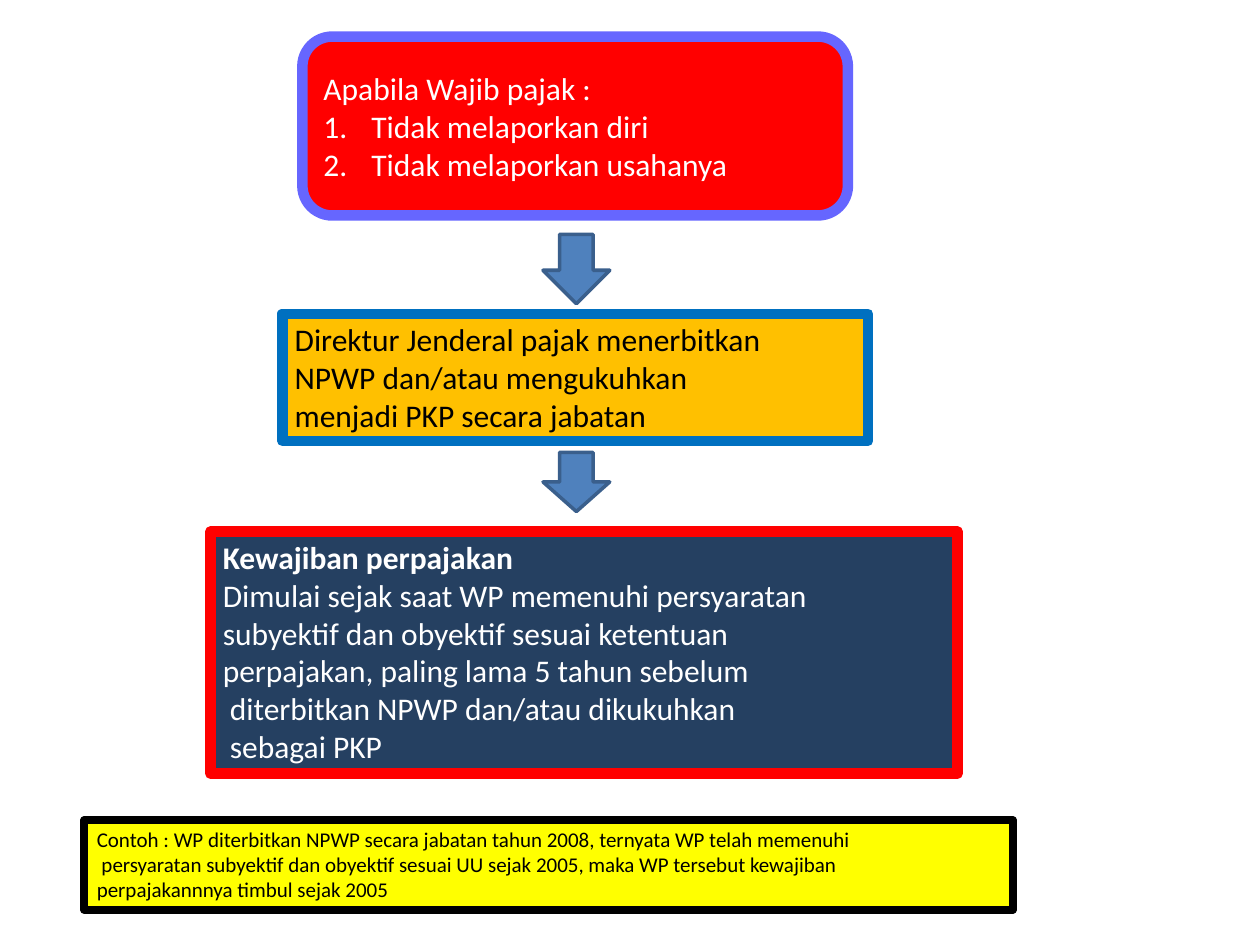
from lxml import etree
from pptx import Presentation
from pptx.dml.color import RGBColor
from pptx.enum.shapes import MSO_SHAPE
from pptx.enum.text import MSO_ANCHOR, PP_ALIGN
from pptx.oxml.ns import qn
from pptx.util import Inches, Pt

ROUNDED = MSO_SHAPE.ROUNDED_RECTANGLE
RECTANGLE = MSO_SHAPE.RECTANGLE
DOWN_ARROW = MSO_SHAPE.DOWN_ARROW
MIDDLE, TOP = MSO_ANCHOR.MIDDLE, MSO_ANCHOR.TOP
LEFT = PP_ALIGN.LEFT


def color(value):
    return RGBColor.from_string(value)


def add_block(slide, kind, place, fill, line, line_width):
    shape = slide.shapes.add_shape(kind, *[Inches(length) for length in place])
    shape.shadow.inherit = False
    shape.fill.solid()
    shape.fill.fore_color.rgb = color(fill)
    shape.line.color.rgb = color(line)
    shape.line.width = Pt(line_width)
    return shape


presentation = Presentation()
presentation.slide_width, presentation.slide_height = Inches(10), Inches(7.5)
slide = presentation.slides.add_slide(presentation.slide_layouts[6])

# Steps of the flow from top to bottom, then the example
boxes = [
    dict(kind=ROUNDED, place=(2.4, 0.29, 4.33, 1.42), fill="FF0000", line="6666FF",
         line_width=6, anchor=MIDDLE, size=18, text_color="FFFFFF",
         lines=["Apabila Wajib pajak :"],
         numbered=["Tidak melaporkan diri", "Tidak melaporkan usahanya"]),
    dict(kind=RECTANGLE, place=(2.24, 2.49, 4.65, 1.01), fill="FFC000", line="0070C0",
         line_width=6, anchor=TOP, size=18, text_color="000000",
         lines=["Direktur Jenderal pajak menerbitkan",
                "NPWP dan/atau mengukuhkan",
                "menjadi PKP secara jabatan"]),
    dict(kind=RECTANGLE, place=(1.67, 4.22, 5.93, 1.92), fill="254061", line="FF0000",
         line_width=6, anchor=TOP, size=18, text_color="FFFFFF",
         heading="Kewajiban perpajakan",
         lines=["Dimulai sejak saat WP memenuhi persyaratan",
                "subyektif dan obyektif sesuai ketentuan",
                "perpajakan, paling lama 5 tahun sebelum",
                " diterbitkan NPWP dan/atau dikukuhkan",
                " sebagai PKP"]),
    dict(kind=RECTANGLE, place=(0.67, 6.51, 7.37, 0.71), fill="FFFF00", line="000000",
         line_width=4.5, anchor=TOP, size=12, text_color="000000",
         lines=["Contoh : WP diterbitkan NPWP secara jabatan tahun 2008, "
                "ternyata WP telah memenuhi",
                " persyaratan subyektif dan obyektif sesuai UU sejak 2005, "
                "maka WP tersebut kewajiban",
                "perpajakannnya timbul sejak 2005"]),
]

for box in boxes:
    shape = add_block(slide, box["kind"], box["place"], box["fill"], box["line"],
                      box["line_width"])
    frame = shape.text_frame
    frame.word_wrap = True
    frame.vertical_anchor = box["anchor"]
    heading = [box["heading"]] if "heading" in box else []
    numbered = box.get("numbered", [])
    texts = heading + box["lines"] + numbered
    for index, text in enumerate(texts):
        paragraph = frame.paragraphs[0] if index == 0 else frame.add_paragraph()
        paragraph.alignment = LEFT
        run = paragraph.add_run()
        run.text = text
        font_format = {"name": "Calibri", "size": Pt(box["size"]), "bold": text in heading}
        for attribute, value in font_format.items():
            setattr(run.font, attribute, value)
        run.font.color.rgb = color(box["text_color"])

        # Automatic numbers with a hanging indent
        if text in numbered:
            properties = paragraph._p.get_or_add_pPr()
            properties.set("marL", str(Inches(0.38)))
            properties.set("indent", str(-Inches(0.38)))
            etree.SubElement(properties, qn("a:buAutoNum"), type="arabicPeriod")

# Arrows between the steps
for top, height in [(1.86, 0.55), (3.59, 0.47)]:
    add_block(slide, DOWN_ARROW, (4.31, top, 0.53, height), "4F81BD", "3A5F8C", 2)

presentation.save("out.pptx")
